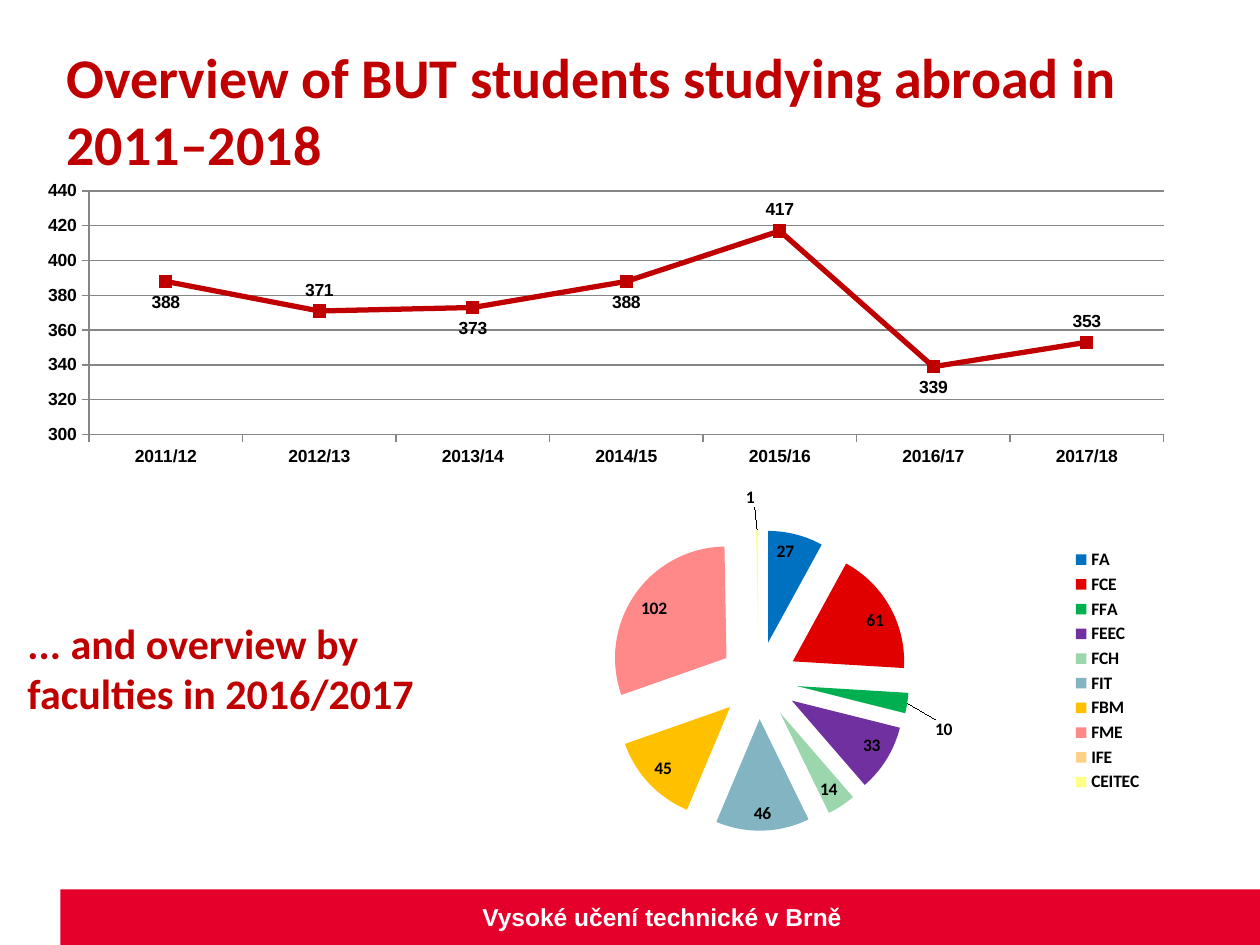
from lxml import etree
from pptx import Presentation
from pptx.chart.data import CategoryChartData
from pptx.dml.color import RGBColor
from pptx.enum.chart import XL_CHART_TYPE as ChartType
from pptx.enum.chart import XL_LABEL_POSITION as LabelPos
from pptx.enum.chart import XL_LEGEND_POSITION as LegendPos
from pptx.enum.chart import XL_MARKER_STYLE as Marker
from pptx.enum.chart import XL_TICK_MARK as Tick
from pptx.enum.shapes import MSO_SHAPE as Shape
from pptx.enum.text import PP_ALIGN as Align
from pptx.oxml.ns import qn
from pptx.util import Inches, Pt

BLACK = RGBColor(0x00, 0x00, 0x00)
WHITE = RGBColor(0xFF, 0xFF, 0xFF)
GRAY = RGBColor(0x86, 0x86, 0x86)
DARK_RED = RGBColor(0xC0, 0x00, 0x00)
BAR_RED = RGBColor(0xE4, 0x00, 0x2B)

STUDENTS = {"2011/12": 388, "2012/13": 371, "2013/14": 373, "2014/15": 388,
            "2015/16": 417, "2016/17": 339, "2017/18": 353}
LABELS_ABOVE = {"2012/13", "2015/16", "2017/18"}

FACULTIES = [
    ("FA", 27, RGBColor(0x00, 0x70, 0xC0)),
    ("FCE", 61, RGBColor(0xE0, 0x00, 0x00)),
    ("FFA", 10, RGBColor(0x00, 0xB0, 0x50)),
    ("FEEC", 33, RGBColor(0x70, 0x30, 0xA0)),
    ("FCH", 14, RGBColor(0x9C, 0xD6, 0xAC)),
    ("FIT", 46, RGBColor(0x82, 0xB4, 0xC2)),
    ("FBM", 45, RGBColor(0xFF, 0xC0, 0x00)),
    ("FME", 102, RGBColor(0xFF, 0x88, 0x88)),
    ("IFE", 0, RGBColor(0xFF, 0xD0, 0x88)),
    ("CEITEC", 1, RGBColor(0xFF, 0xFF, 0x88)),
]
# Labels pulled away from small slices, as shares of the chart size
LABEL_SHIFTS = {"FFA": (0.03, 0.04), "CEITEC": (-0.01, -0.04)}


def manual_layout(**settings):
    layout = etree.Element(qn("c:layout"))
    manual = etree.SubElement(layout, qn("c:manualLayout"))
    for tag, value in settings.items():
        etree.SubElement(manual, qn(f"c:{tag}")).set("val", str(value))
    return layout


class SlideBuilder:
    body_font = "Calibri"
    chart_font = "Arial"
    label_size = 10

    def __init__(self, slide):
        self.slide = slide

    def style(self, font, name, size, color, bold=True):
        font.name, font.size, font.bold = name, Pt(size), bold
        font.color.rgb = color

    def bar(self, box, color):
        bar = self.slide.shapes.add_shape(Shape.RECTANGLE, *map(Inches, box))
        bar.shadow.inherit = False
        bar.fill.solid()
        bar.fill.fore_color.rgb = color
        bar.line.fill.background()

    def text(self, box, content, size, color, font=body_font, align=Align.LEFT):
        frame = self.slide.shapes.add_textbox(*map(Inches, box)).text_frame
        frame.word_wrap = True
        paragraph = frame.paragraphs[0]
        paragraph.text = content
        paragraph.alignment = align
        self.style(paragraph.font, font, size, color)

    def chart(self, kind, box, categories, values, plot_box):
        data = CategoryChartData()
        data.categories = categories
        data.add_series("Series 1", values)
        chart = self.slide.shapes.add_chart(kind, *map(Inches, box), data).chart
        chart.has_title = False
        chart.has_legend = False
        self.style(chart.font, self.chart_font, self.label_size, BLACK, False)
        # Fixed place for the plot inside the chart
        plot_area = chart._chartSpace.chart.plotArea
        for layout in plot_area.findall(qn("c:layout")):
            plot_area.remove(layout)
        x, y, w, h = plot_box
        plot_area.insert(0, manual_layout(
            layoutTarget="inner", xMode="edge", yMode="edge", x=x, y=y, w=w, h=h))
        return chart

    def point_label(self, point, position, font):
        point.data_label.position = position
        self.style(point.data_label.font, font, self.label_size, BLACK)

    def line_chart(self, box, figures, above, plot_box):
        chart = self.chart(ChartType.LINE_MARKERS, box, list(figures),
                           list(figures.values()), plot_box)
        chart.plots[0].vary_by_categories = False
        values = chart.value_axis
        values.minimum_scale, values.maximum_scale = 300, 440
        values.major_unit = 20
        values.has_major_gridlines = True
        values.major_gridlines.format.line.color.rgb = GRAY
        for axis in (values, chart.category_axis):
            axis.major_tick_mark = Tick.OUTSIDE
            axis.format.line.color.rgb = GRAY
            self.style(axis.tick_labels.font, self.chart_font, self.label_size, BLACK)

        series = chart.plots[0].series[0]
        series.smooth = False
        series.format.line.color.rgb = DARK_RED
        series.format.line.width = Pt(3)
        series.marker.style = Marker.SQUARE
        series.marker.size = 7
        series.marker.format.fill.solid()
        series.marker.format.fill.fore_color.rgb = DARK_RED
        series.marker.format.line.color.rgb = DARK_RED
        for i, year in enumerate(figures):
            position = LabelPos.ABOVE if year in above else LabelPos.BELOW
            self.point_label(series.points[i], position, self.chart_font)

    def pie_chart(self, box, slices, shifts, plot_box, explosion):
        names, counts, colors = zip(*slices)
        chart = self.chart(ChartType.PIE, box, names, counts, plot_box)
        chart.plots[0].vary_by_categories = True
        chart.has_legend = True
        chart.legend.position = LegendPos.RIGHT
        chart.legend.include_in_layout = False
        self.style(chart.legend.font, self.body_font, self.label_size, BLACK)

        series = chart.plots[0].series[0]
        exploded = etree.Element(qn("c:explosion"))
        exploded.set("val", str(explosion))
        series._element.find(qn("c:tx")).addnext(exploded)
        labels = series.data_labels
        labels.show_value = True
        labels.position = LabelPos.INSIDE_END
        self.style(labels.font, self.body_font, self.label_size, BLACK)

        for i, (name, color) in enumerate(zip(names, colors)):
            point = series.points[i]
            point.format.fill.solid()
            point.format.fill.fore_color.rgb = color
            if name in shifts:
                self.point_label(point, LabelPos.OUTSIDE_END, self.body_font)
                x, y = shifts[name]
                self.label_index(series, i).addnext(manual_layout(x=x, y=y))
            elif not counts[i]:
                # An empty slice carries no label
                point.data_label.position = LabelPos.INSIDE_END
                index = self.label_index(series, i)
                for setting in list(index.itersiblings()):
                    index.getparent().remove(setting)
                etree.SubElement(index.getparent(), qn("c:delete")).set("val", "1")

    def label_index(self, series, i):
        return series._element.xpath(f"c:dLbls/c:dLbl/c:idx[@val='{i}']")[0]


def main():
    deck = Presentation()
    deck.slide_width, deck.slide_height = Inches(10), Inches(7.5)
    builder = SlideBuilder(deck.slides.add_slide(deck.slide_layouts[6]))

    # Footer
    builder.bar((0.48, 7.06, 9.52, 0.44), BAR_RED)
    builder.text((0.51, 7.11, 9.49, 0.34), "Vysoké učení technické v Brně", 14,
                 WHITE, builder.chart_font, Align.CENTER)

    # Headings
    builder.text((0.43, 0.29, 8.75, 0.77),
                 "Overview of BUT students studying abroad in 2011–2018", 32, DARK_RED)
    builder.text((0.12, 4.85, 3.86, 0.55),
                 "... and overview by faculties in 2016/2017", 24, DARK_RED)

    # Students by year, then by faculty
    builder.line_chart((0.2, 1.39, 9.21, 2.36), STUDENTS, LABELS_ABOVE,
                       (0.055, 0.053, 0.926, 0.82))
    builder.pie_chart((3.74, 3.83, 5.43, 2.99), FACULTIES, LABEL_SHIFTS,
                      (0.2, 0.12, 0.44, 0.81), explosion=35)

    deck.save("out.pptx")


if __name__ == "__main__":
    main()
